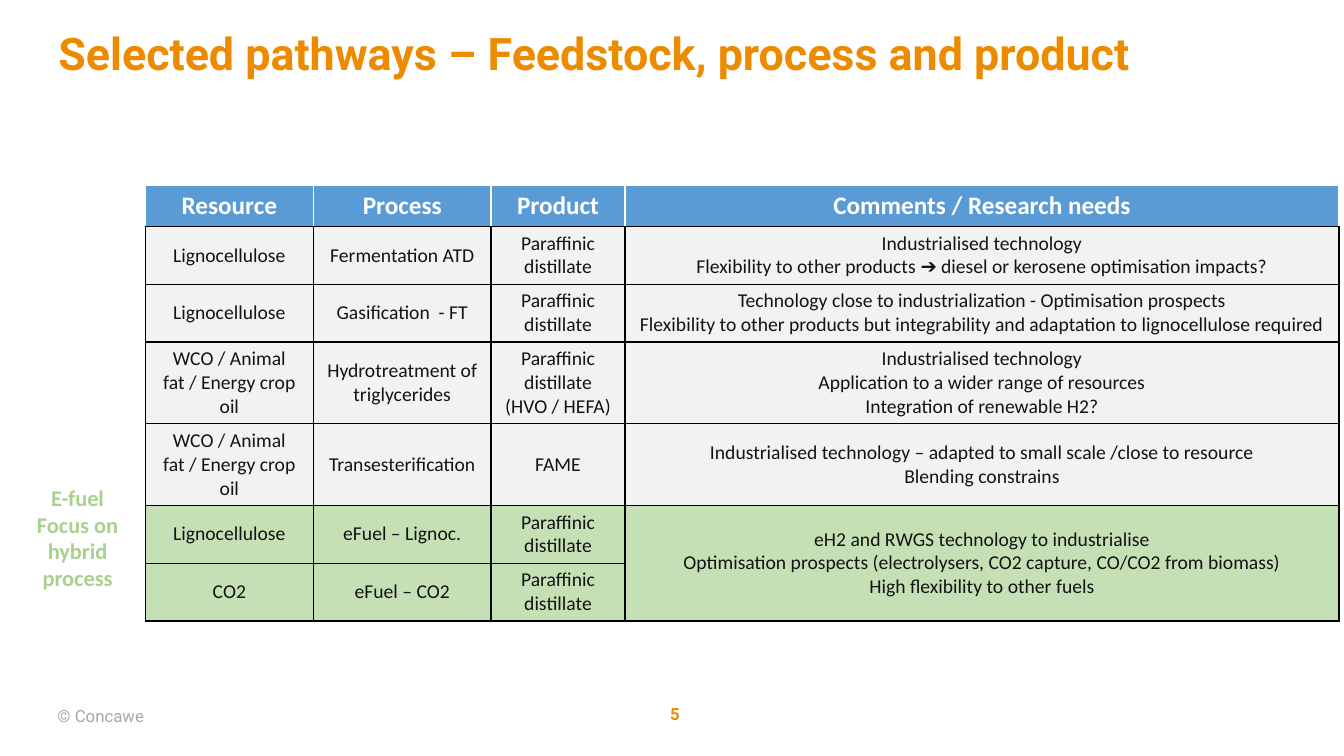
"""Build the slide on selected fuel pathways: feedstock, process and product."""
from lxml import etree
from pptx import Presentation
from pptx.dml.color import RGBColor
from pptx.enum import text
from pptx.oxml import ns
from pptx.util import Inches, Pt

TITLE = "Selected pathways – Feedstock, process and product"
HEADER = ["Resource", "Process", "Product", "Comments / Research needs"]
DISTILLATE = "Paraffinic distillate"
OILS = "WCO / Animal fat / Energy crop oil"
PATHWAYS = [
    ("Lignocellulose", "Fermentation ATD", DISTILLATE,
     "Industrialised technology\n"
     "Flexibility to other products ➔ diesel or kerosene optimisation impacts?"),
    ("Lignocellulose", "Gasification  - FT", DISTILLATE,
     "Technology close to industrialization - Optimisation prospects\n"
     "Flexibility to other products but integrability and adaptation to lignocellulose required"),
    (OILS, "Hydrotreatment of triglycerides", DISTILLATE + "\n(HVO / HEFA)",
     "Industrialised technology\nApplication to a wider range of resources\n"
     "Integration of renewable H2?"),
    (OILS, "Transesterification", "FAME",
     "Industrialised technology – adapted to small scale /close to resource\n"
     "Blending constrains"),
]
EFUELS = [
    ("Lignocellulose", "eFuel – Lignoc.", DISTILLATE,
     "eH2 and RWGS technology to industrialise\n"
     "Optimisation prospects (electrolysers, CO2 capture, CO/CO2 from biomass)\n"
     "High flexibility to other fuels"),
    ("CO2", "eFuel – CO2", DISTILLATE, ""),
]
COLUMN_WIDTHS = [1.67, 1.76, 1.33, 7.08]
ROW_HEIGHTS = [0.4, 0.57, 0.57, 0.81, 0.81, 0.57, 0.57]
TABLE_LEFT, TABLE_TOP = 1.44, 1.84

ORANGE, WHITE, BLACK = "ED8B00", "FFFFFF", "000000"
CENTER, LEFT = text.PP_ALIGN.CENTER, text.PP_ALIGN.LEFT
TITLE_FONT = {"name": "Roboto", "size": Pt(32), "bold": True, "color": ORANGE}
COPYRIGHT_FONT = {"name": "Roboto", "size": Pt(12), "bold": False, "color": "A7A8AA"}
NUMBER_FONT = COPYRIGHT_FONT | {"bold": True, "color": ORANGE}
HEADER_FONT = {"name": "Calibri", "size": Pt(18), "bold": True, "color": WHITE}
BODY_FONT = HEADER_FONT | {"size": Pt(14), "bold": False, "color": "141313"}
EFUEL_FONT = HEADER_FONT | {"size": Pt(16), "color": "A9D18E"}

TEXT_BOXES = [
    ("E-fuel\nFocus on hybrid process", (0.05, 4.75, 1.44, 1.18), EFUEL_FONT, CENTER,
     text.MSO_ANCHOR.TOP, (0.1, 0.05, 0.1, 0.05)),
    ("© Concawe", (0.57, 7, 1.17, 0.25), COPYRIGHT_FONT, LEFT,
     text.MSO_ANCHOR.MIDDLE, (0, 0, 0.1, 0.05)),
    ("5", (6.43, 6.98, 0.53, 0.2), NUMBER_FONT, CENTER,
     text.MSO_ANCHOR.MIDDLE, (0, 0, 0, 0)),
]


def rgb(value):
    return RGBColor.from_string(value)


def write(frame, content, font, alignment):
    frame.text = content
    for paragraph in frame.paragraphs:
        paragraph.alignment = alignment
        for run in paragraph.runs:
            for name, value in font.items():
                if name == "color":
                    run.font.color.rgb = rgb(value)
                else:
                    setattr(run.font, name, value)


def format_frame(frame, anchor, margins):
    sides = ("margin_left", "margin_top", "margin_right", "margin_bottom")
    values = dict(zip(sides, map(Inches, margins)))
    values |= {"word_wrap": True, "auto_size": text.MSO_AUTO_SIZE.NONE,
               "vertical_anchor": anchor}
    for name, value in values.items():
        setattr(frame, name, value)


def place(shape, box):
    for name, value in zip(("left", "top", "width", "height"), box):
        setattr(shape, name, Inches(value))


def set_borders(cell, colors):
    properties = cell._tc.get_or_add_tcPr()
    for index, (side, color) in enumerate(zip("LRTB", colors)):
        line = etree.Element(ns.qn(f"a:ln{side}"), w=str(Pt(1)))
        fill = etree.SubElement(line, ns.qn("a:solidFill"))
        etree.SubElement(fill, ns.qn("a:srgbClr"), val=color)
        properties.insert(index, line)


def add_pathway_table(slide):
    rows = [(HEADER, "5B9BD5", HEADER_FONT, (WHITE, WHITE, WHITE, BLACK))]
    for group, fill in ((PATHWAYS, "F2F2F2"), (EFUELS, "C5E0B4")):
        rows += [(values, fill, BODY_FONT, (BLACK,) * 4) for values in group]
    table = slide.shapes.add_table(
        len(rows), len(HEADER), Inches(TABLE_LEFT), Inches(TABLE_TOP),
        Inches(sum(COLUMN_WIDTHS)), Inches(sum(ROW_HEIGHTS))).table
    for column, width in zip(table.columns, COLUMN_WIDTHS):
        column.width = Inches(width)
    for row, height, (values, fill, font, borders) in zip(table.rows, ROW_HEIGHTS, rows):
        row.height = Inches(height)
        for cell, value in zip(row.cells, values):
            write(cell.text_frame, value, font, CENTER)
            cell.vertical_anchor = text.MSO_ANCHOR.MIDDLE
            cell.fill.solid()
            cell.fill.fore_color.rgb = rgb(fill)
            set_borders(cell, borders)
    last_row, last_column = len(rows) - 1, len(HEADER) - 1
    table.cell(last_row - 1, last_column).merge(table.cell(last_row, last_column))


def main():
    presentation = Presentation()
    presentation.slide_width = Inches(13.33)
    presentation.slide_height = Inches(7.5)
    slide = presentation.slides.add_slide(presentation.slide_layouts[5])

    title = slide.shapes.title
    place(title, (0.58, 0.26, 12.23, 0.78))
    format_frame(title.text_frame, text.MSO_ANCHOR.TOP, (0, 0, 0.1, 0.05))
    write(title.text_frame, TITLE, TITLE_FONT, LEFT)

    add_pathway_table(slide)
    for content, box, font, alignment, anchor, margins in TEXT_BOXES:
        shape = slide.shapes.add_textbox(*map(Inches, box))
        format_frame(shape.text_frame, anchor, margins)
        write(shape.text_frame, content, font, alignment)

    presentation.save("out.pptx")


if __name__ == "__main__":
    main()
